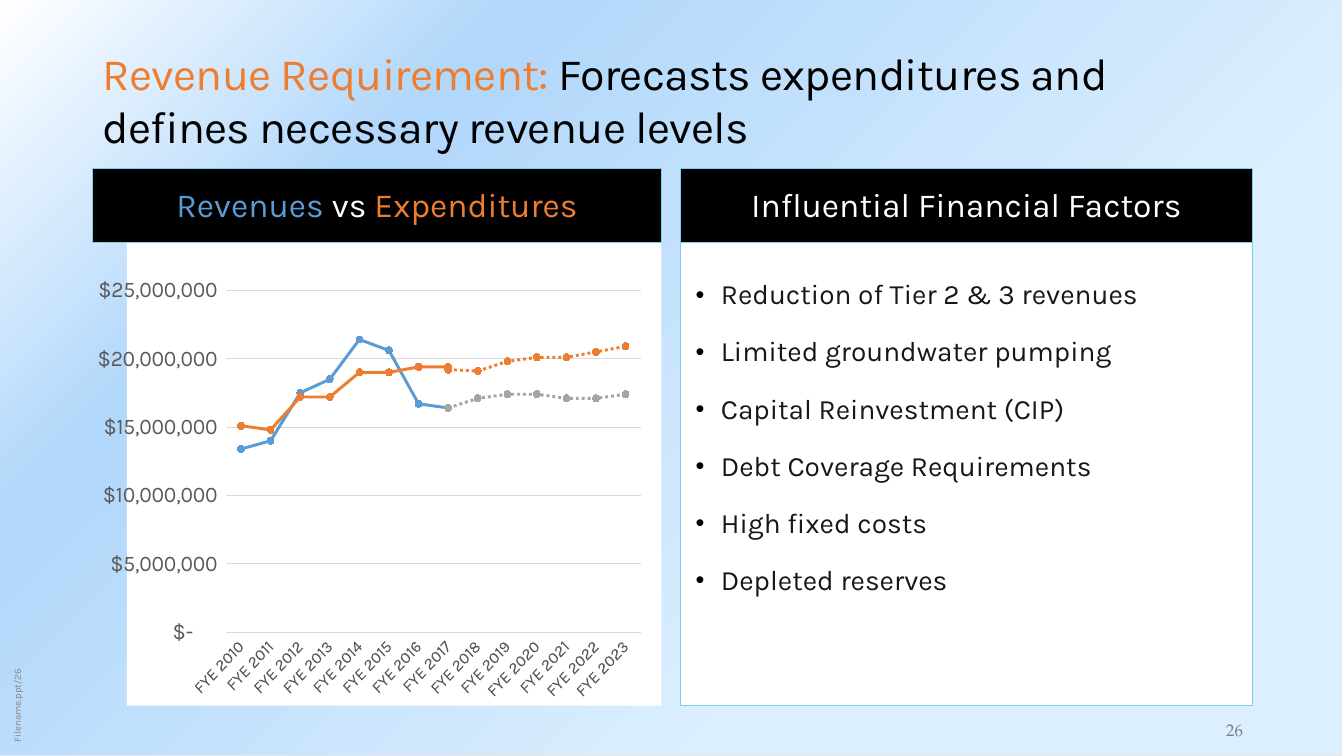
from dataclasses import dataclass, field
from typing import Any, Optional

from pptx import Presentation
from pptx.chart.data import CategoryChartData as Data
from pptx.dml.color import RGBColor
from pptx.enum.chart import XL_CHART_TYPE as Kind, XL_MARKER_STYLE as Mark, XL_TICK_MARK as Tick
from pptx.enum.dml import MSO_LINE as Dash
from pptx.enum.shapes import MSO_SHAPE as Form
from pptx.enum.text import MSO_ANCHOR as Anchor, PP_ALIGN as Align
from pptx.oxml import parse_xml as to_xml
from pptx.oxml.ns import nsdecls, qn
from pptx.util import Inches, Pt

BLACK = RGBColor(0, 0, 0)
WHITE = RGBColor(255, 255, 255)
BLUE = RGBColor(0x5B, 0x9B, 0xD5)
ORANGE = RGBColor(0xED, 0x7D, 0x31)
GRAY = RGBColor(0xA5, 0xA5, 0xA5)
CYAN = RGBColor(0x76, 0xD4, 0xEA)
INK = RGBColor(0x18, 0x17, 0x17)
LABEL = RGBColor(0x59, 0x59, 0x59)
GRID = RGBColor(0xD9, 0xD9, 0xD9)
EDGE = RGBColor(0xE7, 0xE6, 0xE6)
DIM = RGBColor(0x8B, 0x85, 0x85)
PAGE = RGBColor(0x80, 0x80, 0x80)
SANS = "Karla"
SERIF = "TeX Gyre Pagella"

LEFT, RIGHT, TOP, TALL = 0.92, 6.75, 1.67, 5.33
WIDE_L, WIDE_R, HEAD = 5.64, 5.67, 0.74
TIGHT = dict.fromkeys(
    ("margin_left", "margin_top", "margin_right", "margin_bottom"), Inches(0.05))
LOW = {**TIGHT, "vertical_anchor": Anchor.BOTTOM}
MID = {"vertical_anchor": Anchor.MIDDLE}
MONEY = r'_("$"* #,##0_);_("$"* \(#,##0\);_("$"* "-"??_);_(@_)'


@dataclass
class Run:
    text: str
    color: RGBColor
    size: float
    face: str = SANS
    space: int = 0


@dataclass
class Box:
    at: tuple[float, float, float, float]
    lines: list[list[Run]]
    fill: Optional[RGBColor] = None
    frame: dict[str, Any] = field(default_factory=dict)
    para: dict[str, Any] = field(default_factory=dict)
    gap: float = 0
    dots: bool = False
    turn: float = 0


@dataclass
class Trend:
    vals: list[float]
    start: int
    color: RGBColor
    dash: Dash = Dash.SOLID


FACTORS = ["Reduction of Tier 2 & 3 revenues", "Limited groundwater pumping",
           "Capital Reinvestment (CIP)", "Debt Coverage Requirements",
           "High fixed costs", "Depleted reserves"]
YEARS = range(2010, 2024)
TRENDS = [
    Trend([13.4, 14, 17.5, 18.5, 21.4, 20.6, 16.7, 16.4], 2010, BLUE),
    Trend([15.1, 14.8, 17.2, 17.2, 19, 19, 19.4, 19.4], 2010, ORANGE),
    Trend([16.4, 17.1, 17.4, 17.4, 17.1, 17.1, 17.4], 2017, GRAY, Dash.ROUND_DOT),
    Trend([19.2, 19.1, 19.8, 20.1, 20.1, 20.5, 20.9], 2017, ORANGE, Dash.ROUND_DOT),
]
CENTER = {"alignment": Align.CENTER, "line_spacing": 0.95}
NOTES = [
    Box((-1.17, 5.97, 2.67, 0.22), [[Run("Filename.ppt/26", DIM, 7)]], frame=LOW, turn=270),
    Box((11.79, 7.09, 0.91, 0.3), [[Run("26", PAGE, 12, SERIF)]], frame=LOW,
        para={"alignment": Align.CENTER}),
]
PANELS = [
    Box((RIGHT, TOP, WIDE_R, TALL), [[Run(t, INK, 20)] for t in FACTORS], WHITE,
        {"margin_left": Inches(0.15), "margin_top": Inches(1.1),
         "margin_right": Inches(0.15), "vertical_anchor": Anchor.TOP},
        {"alignment": Align.LEFT, "line_spacing": 0.95}, gap=18, dots=True),
    Box((LEFT, 0.4, 11.5, 0.93),
        [[Run("Revenue Requirement: ", ORANGE, 32, space=-50),
          Run("Forecasts expenditures and defines necessary revenue levels",
              BLACK, 32, space=-50)]]),
    Box((LEFT, TOP, WIDE_L, HEAD),
        [[Run("Revenues", BLUE, 24), Run(" vs ", WHITE, 24),
          Run("Expenditures", ORANGE, 24)]], BLACK, MID, CENTER),
    Box((RIGHT, TOP, WIDE_R, HEAD),
        [[Run("Influential Financial Factors", WHITE, 24)]], BLACK, MID, CENTER),
]


def put(item: Any, vals: dict[str, Any]) -> None:
    for key, val in vals.items():
        setattr(item, key, val)


def stroke(line: Any, color: RGBColor, width: float) -> None:
    line.color.rgb = color
    line.width = Pt(width)


def style(font: Any, size: float, color: RGBColor, face: str = SANS) -> None:
    put(font, {"size": Pt(size), "name": face})
    font.color.rgb = color


def add_dot(para: Any) -> None:
    props = para._p.get_or_add_pPr()
    props.set("marL", str(Inches(0.25)))
    props.set("indent", str(Inches(-0.25)))
    for body in ('buClr {0}><a:srgbClr val="000000"/></a:buClr>',
                 'buSzPct {0} val="90000"/>', 'buFont {0} typeface="Arial"/>',
                 'buChar {0} char="•"/>'):
        props.append(to_xml("<a:" + body.format(nsdecls("a"))))


def add_box(slide: Any, box: Box) -> None:
    spot = [Inches(n) for n in box.at]
    if box.fill is None:
        shape = slide.shapes.add_textbox(*spot)
    else:
        shape = slide.shapes.add_shape(Form.RECTANGLE, *spot)
        shape.shadow.inherit = False
        shape.fill.solid()
        shape.fill.fore_color.rgb = box.fill
        stroke(shape.line, CYAN, 0.75)
    shape.rotation = box.turn
    frame = shape.text_frame
    put(frame, {"word_wrap": True, **box.frame})
    for i, runs in enumerate(box.lines):
        para = frame.add_paragraph() if i else frame.paragraphs[0]
        if box.dots:
            add_dot(para)
        put(para, {**box.para, "space_before": Pt(box.gap if i else 0)})
        for run in runs:
            part = para.add_run()
            part.text = run.text
            style(part.font, run.size, run.color, run.face)
            if run.space:
                part._r.get_or_add_rPr().set("spc", str(run.space))


def add_back(slide: Any) -> None:
    shape = slide.shapes.add_shape(
        Form.RECTANGLE, Inches(-0.02), 0, Inches(13.33), Inches(7.5))
    shape.shadow.inherit = False
    stops = "".join(
        f'<a:gs pos="{pos}000"><a:srgbClr val="{tone}"/></a:gs>'
        for pos, tone in ((30, "DCEFFE"), (75, "B1D7FB"), (100, "FFFFFF")))
    fade = to_xml(
        f'<a:gradFill {nsdecls("a")} rotWithShape="1"><a:gsLst>{stops}</a:gsLst>'
        '<a:path path="circle"><a:fillToRect l="100000" t="100000"/></a:path></a:gradFill>')
    shape._element.spPr.find(qn("a:prstGeom")).addnext(fade)
    stroke(shape.line, EDGE, 0.75)


def add_trends(slide: Any) -> None:
    data = Data()
    data.categories = [f"FYE {year}" for year in YEARS]
    for i, trend in enumerate(TRENDS, 1):
        vals = {trend.start + n: round(val * 1e6) for n, val in enumerate(trend.vals)}
        data.add_series(f"Series {i}", [vals.get(year) for year in YEARS])
    spot = [Inches(n) for n in (LEFT, TOP, WIDE_L, TALL)]
    chart = slide.shapes.add_chart(Kind.LINE_MARKERS, *spot, data).chart
    put(chart, {"has_legend": False, "has_title": False})
    style(chart.font, 10, BLACK)
    plot = chart.plots[0]
    plot.vary_by_categories = False
    for line, trend in zip(plot.series, TRENDS):
        line.smooth = False
        stroke(line.format.line, trend.color, 2.25)
        line.format.line.dash_style = trend.dash
        put(line.marker, {"style": Mark.CIRCLE, "size": 5})
        look = line.marker.format
        look.fill.solid()
        look.fill.fore_color.rgb = trend.color
        stroke(look.line, trend.color, 0.75)
    years, money = chart.category_axis, chart.value_axis
    for axis, size in ((years, 12), (money, 16)):
        put(axis, {"major_tick_mark": Tick.NONE, "minor_tick_mark": Tick.NONE})
        style(axis.tick_labels.font, size, LABEL)
    stroke(years.format.line, GRID, 0.75)
    years._element.find(qn("c:txPr")).find(qn("a:bodyPr")).set("rot", "-2700000")
    put(money, {"minimum_scale": 0, "maximum_scale": 25e6, "major_unit": 5e6})
    put(money.tick_labels, {"number_format": MONEY, "number_format_is_linked": False})
    money.format.line.fill.background()
    stroke(money.major_gridlines.format.line, GRID, 0.75)
    space = chart._chartSpace
    space.find(qn("c:txPr")).addprevious(to_xml(
        f'<c:spPr {nsdecls("c", "a")}><a:solidFill><a:srgbClr val="FFFFFF"/></a:solidFill>'
        '<a:ln><a:noFill/></a:ln></c:spPr>'))
    area = space.find(qn("c:chart")).find(qn("c:plotArea"))
    for old in area.findall(qn("c:layout")):
        area.remove(old)
    rules = [("layoutTarget", "inner"), ("xMode", "edge"), ("yMode", "edge"),
             ("x", 0.186), ("y", 0.227), ("w", 0.775), ("h", 0.637)]
    body = "".join(f'<c:{key} val="{val}"/>' for key, val in rules)
    area.insert(0, to_xml(
        f'<c:layout {nsdecls("c")}><c:manualLayout>{body}</c:manualLayout></c:layout>'))


def main() -> None:
    deck = Presentation()
    put(deck, {"slide_width": Inches(13.33), "slide_height": Inches(7.5)})
    slide = deck.slides.add_slide(deck.slide_layouts[6])
    add_back(slide)
    for box in NOTES:
        add_box(slide, box)
    add_trends(slide)
    for box in PANELS:
        add_box(slide, box)
    deck.save("out.pptx")


if __name__ == "__main__":
    main()
